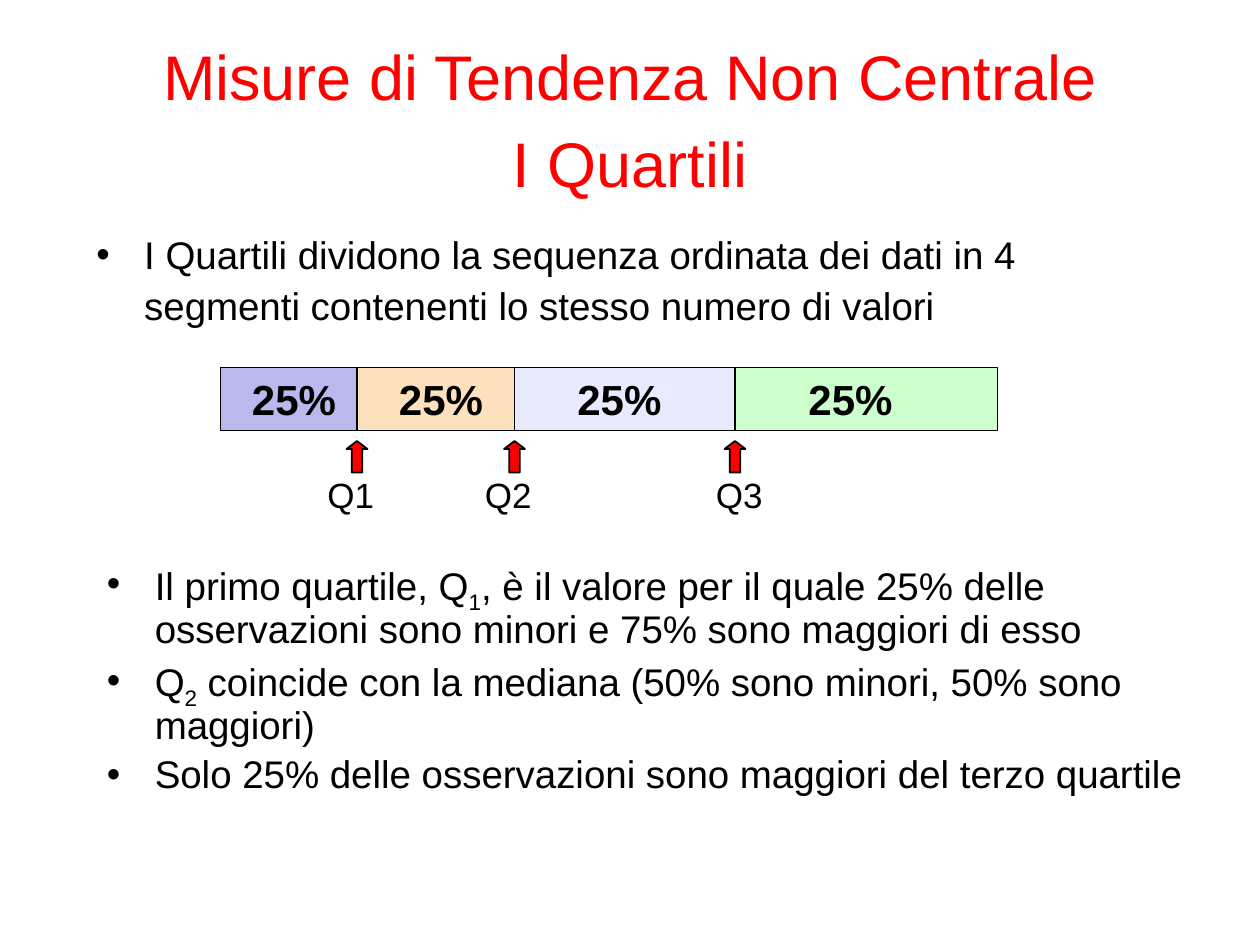
from lxml import etree
from pptx import Presentation
from pptx.dml.color import RGBColor
from pptx.enum.shapes import MSO_SHAPE
from pptx.enum.text import MSO_ANCHOR, PP_ALIGN
from pptx.oxml.ns import qn
from pptx.util import Inches, Pt

RECT, ARROW = MSO_SHAPE.RECTANGLE, MSO_SHAPE.RIGHT_ARROW
CENTER, LEFT = PP_ALIGN.CENTER, PP_ALIGN.LEFT
MIDDLE, TOP = MSO_ANCHOR.MIDDLE, MSO_ANCHOR.TOP
HEX = {"ink": "000000", "red": "FF0000", "blue": "B9B9ED",
       "peach": "FDE0BD", "lilac": "E9E9FF", "green": "CCFFCC"}
RGB = {name: RGBColor.from_string(code) for name, code in HEX.items()}

deck = Presentation()
deck.slide_width, deck.slide_height = Inches(10), Inches(7.5)
COL, ROW = deck.slide_width / 120, deck.slide_height / 90
slide = deck.slides.add_slide(deck.slide_layouts[5])


def place(*cells):
    """Turn left, top, width, height in grid cells into slide lengths."""
    return [int(n * unit) for n, unit in zip(cells, (COL, ROW, COL, ROW))]


def write(box, *lines, size=22, color="ink", bold=False, align=LEFT,
          anchor=TOP, space=0.9, bullet=False):
    """Fill a box with paragraphs; text between bars is subscript."""
    frame = box.text_frame
    frame.word_wrap, frame.vertical_anchor = True, anchor
    for i, line in enumerate(lines):
        para = frame.add_paragraph() if i else frame.paragraphs[0]
        para.alignment, para.line_spacing = align, space
        para.space_before = Pt(size * 0.2 if i else 0)
        if bullet:
            props = para._p.get_or_add_pPr()
            props.set("marL", str(Inches(0.38)))
            props.set("indent", str(-Inches(0.38)))
            etree.SubElement(props, qn("a:buFont"), typeface="Arial")
            etree.SubElement(props, qn("a:buChar"), char="•")
        for j, part in enumerate(line.split("|")):
            for k, piece in enumerate(part.split("\n")):
                if k:
                    para.add_line_break()
                run = para.add_run()
                run.text = piece
                run.font.name, run.font.size = "Arial", Pt(size)
                run.font.bold, run.font.color.rgb = bold, RGB[color]
                if j % 2:
                    run._r.get_or_add_rPr().set("baseline", "-25000")


title = slide.shapes.title
title.left, title.top, title.width, title.height = place(0, 5.8, 120, 10)
write(title, "Misure di Tendenza Non Centrale\nI Quartili", size=36,
      color="red", align=CENTER, anchor=MIDDLE, space=1.15)

intro = slide.shapes.add_textbox(*place(8, 21, 101, 12.5))
write(intro, "I Quartili dividono la sequenza ordinata dei dati in 4 "
      "segmenti contenenti lo stesso numero di valori",
      space=1.1, bullet=True)

# Left edge, width, label's left edge, colour
parts = [(21, 15, 22, "blue"), (34, 15, 36, "peach"),
         (49, 23, 53, "lilac"), (70, 25, 75, "green")]
shapes = [(RECT, place(left, 35, width, 6), color, 0)
          for left, width, _, color in parts]
shapes += [(ARROW, place(part[0] - 1.5, 42.5, 3, 2), "red", 270)
           for part in parts[1:]]
for kind, spot, color, turn in shapes:
    shape = slide.shapes.add_shape(kind, *spot)
    shape.shadow.inherit = False
    shape.fill.solid()
    shape.fill.fore_color.rgb = RGB[color]
    shape.line.color.rgb, shape.line.width = RGB["ink"], Pt(1)
    shape.rotation = turn
    if kind == ARROW:
        shape.adjustments[1] = 0.38

for _, _, left, _ in parts:
    share = slide.shapes.add_textbox(*place(left, 35, 12, 6))
    write(share, "25%", size=24, bold=True, align=CENTER, space=1)

for i, left in enumerate((30, 45, 67), 1):
    mark = slide.shapes.add_textbox(*place(left, 45, 8, 6))
    write(mark, f"Q{i}", size=20)

notes = slide.shapes.add_textbox(*place(9, 53, 105, 29))
write(notes,
      "Il primo quartile, Q|1|, è il valore per il quale 25% delle "
      "osservazioni sono minori e 75% sono maggiori di esso",
      "Q|2| coincide con la mediana (50% sono minori, 50% sono maggiori)",
      "Solo 25% delle osservazioni sono maggiori del terzo quartile",
      bullet=True)

deck.save("out.pptx")
